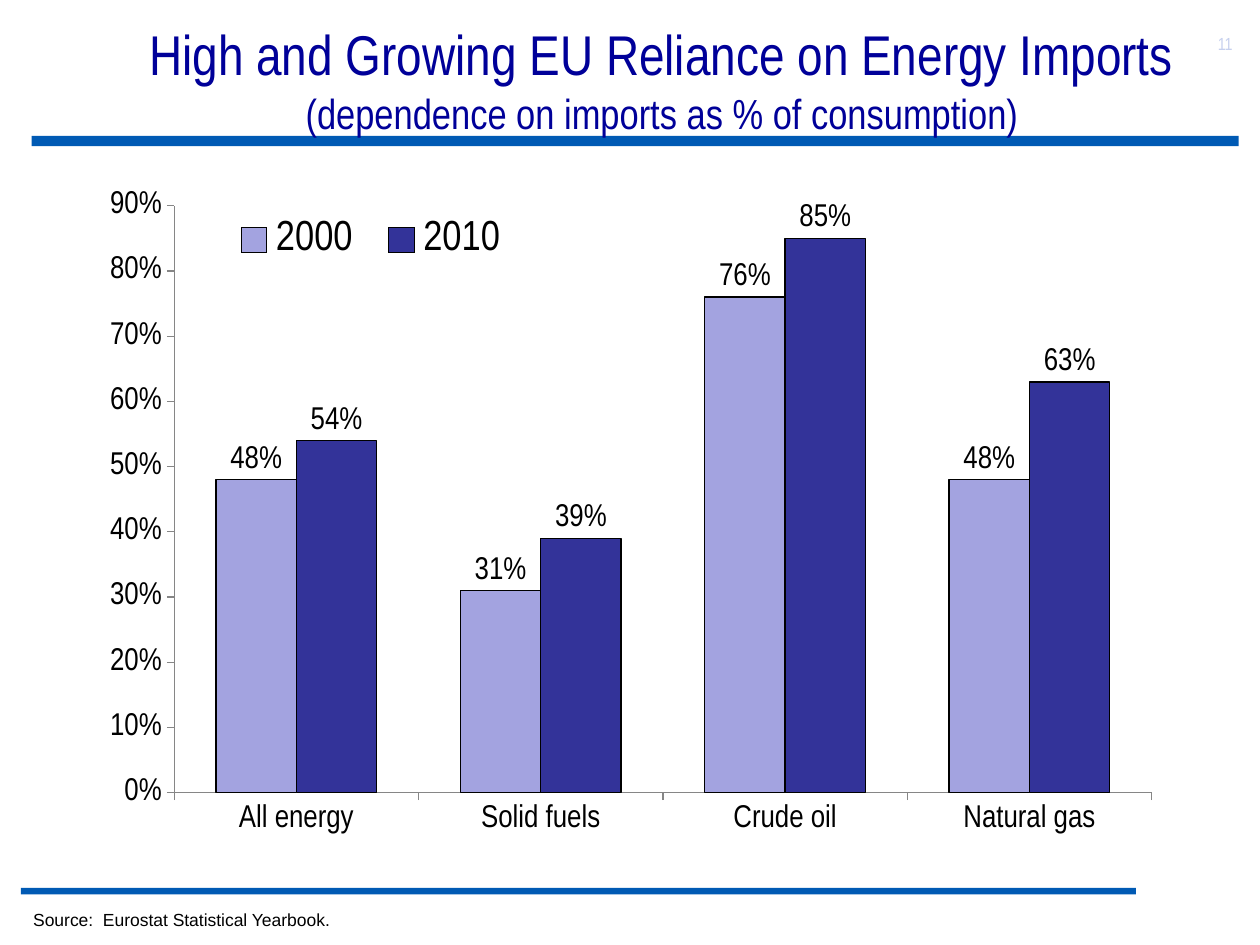
from lxml import etree
from pptx import Presentation
from pptx.chart.data import CategoryChartData
from pptx.dml.color import RGBColor
from pptx.enum.chart import XL_CHART_TYPE as ChartType, XL_LABEL_POSITION as LabelPos
from pptx.enum.chart import XL_LEGEND_POSITION as LegendPos, XL_TICK_MARK as Tick
from pptx.enum.shapes import MSO_SHAPE as Shape
from pptx.enum.text import MSO_ANCHOR as Anchor, PP_ALIGN as Align
from pptx.oxml.ns import qn
from pptx.util import Cm, Pt

BLUE = RGBColor(0x00, 0x5A, 0xB4)
NAVY = RGBColor(0x00, 0x00, 0x99)
PALE = RGBColor(0xC6, 0xD0, 0xEE)
LILAC = RGBColor(0xA3, 0xA3, 0xE0)
INDIGO = RGBColor(0x33, 0x33, 0x99)
GREY = RGBColor(0x86, 0x86, 0x86)
BLACK = RGBColor(0, 0, 0)
NARROW = "Arial Narrow"


class SlideBuilder:
    """Holds the slide and its style, and adds each kind of element."""

    def __init__(self, prs):
        self.s = prs.slides.add_slide(prs.slide_layouts[6])
        self.font = NARROW

    def bar(self, x, y, w, h):
        sp = self.s.shapes.add_shape(Shape.RECTANGLE, Cm(x), Cm(y), Cm(w), Cm(h))
        sp.shadow.inherit = False
        sp.fill.solid()
        sp.fill.fore_color.rgb = BLUE
        sp.line.fill.background()

    def text(self, x, y, w, h, lines, color, font=None, align=Align.LEFT, anchor=Anchor.TOP):
        tf = self.s.shapes.add_textbox(Cm(x), Cm(y), Cm(w), Cm(h)).text_frame
        tf.word_wrap = True
        tf.vertical_anchor = anchor
        p = tf.paragraphs[0]
        p.alignment = align
        for i, (words, size) in enumerate(lines):
            if i:
                p.add_line_break()
            r = p.add_run()
            r.text = words
            r.font.size = Pt(size)
            r.font.name = font or self.font
            r.font.color.rgb = color

    def layout(self, parent, before, box, inner=False):
        for old in parent.findall(qn("c:layout")):
            parent.remove(old)
        layout = etree.Element(qn("c:layout"))
        manual = etree.SubElement(layout, qn("c:manualLayout"))
        target = [("layoutTarget", "inner")] if inner else []
        modes = [("xMode", "edge"), ("yMode", "edge")]
        for tag, val in target + modes + list(zip("xywh", box)):
            etree.SubElement(manual, qn(f"c:{tag}")).set("val", str(val))
        parent.find(qn(before)).addprevious(layout)

    def axis(self, axis):
        axis.has_major_gridlines = False
        axis.major_tick_mark = Tick.OUTSIDE
        axis.minor_tick_mark = Tick.NONE
        axis.format.line.color.rgb = GREY
        axis.format.line.width = Pt(0.75)

    def columns(self, x, y, w, h, cats, series, plot_box, legend_box):
        data = CategoryChartData(number_format="0%")
        data.categories = cats
        for name, vals, _ in series:
            data.add_series(name, vals)
        chart = self.s.shapes.add_chart(
            ChartType.COLUMN_CLUSTERED, Cm(x), Cm(y), Cm(w), Cm(h), data).chart
        chart.has_title = False
        chart.font.size = Pt(18)
        chart.font.name = self.font
        chart.font.color.rgb = BLACK
        self.axis(chart.category_axis)
        self.axis(chart.value_axis)
        scale = chart.value_axis
        scale.minimum_scale, scale.maximum_scale, scale.major_unit = 0, 0.9, 0.1
        scale.tick_labels.number_format = "0%"
        scale.tick_labels.number_format_is_linked = False

        plot = chart.plots[0]
        plot.gap_width, plot.overlap = 104, 0
        plot.vary_by_categories = False
        for ser, (_, _, color) in zip(plot.series, series):
            ser.format.fill.solid()
            ser.format.fill.fore_color.rgb = color
            ser.format.line.color.rgb = BLACK
            ser.format.line.width = Pt(0.75)
            labels = ser.data_labels
            labels.show_value = True
            labels.number_format = "0%"
            labels.number_format_is_linked = False
            labels.position = LabelPos.OUTSIDE_END

        chart.has_legend = True
        legend = chart.legend
        legend.position = LegendPos.RIGHT
        legend.include_in_layout = False
        legend.font.size = Pt(24)
        legend.font.name = self.font
        legend.font.color.rgb = BLACK
        root = chart.element
        self.layout(root.find(".//" + qn("c:plotArea")), "c:barChart", plot_box, inner=True)
        self.layout(root.find(".//" + qn("c:legend")), "c:overlay", legend_box)


def main():
    prs = Presentation()
    prs.slide_width, prs.slide_height = Cm(25.4), Cm(19.05)
    b = SlideBuilder(prs)
    b.bar(0.64, 2.74, 24.33, 0.21)
    b.bar(0.42, 17.9, 22.48, 0.13)
    b.text(1.7, 0.42, 23.28, 2.33,
           [("High and Growing EU Reliance on Energy Imports", 32),
            ("(dependence on imports as % of consumption)", 24)],
           NAVY, align=Align.CENTER, anchor=Anchor.MIDDLE)
    b.columns(1.7, 3.6, 22.65, 13.76,
              ["All energy", "Solid fuels", "Crude oil", "Natural gas"],
              [("2000", (0.48, 0.31, 0.76, 0.48), LILAC),
               ("2010", (0.54, 0.39, 0.85, 0.63), INDIGO)],
              plot_box=(0.08, 0.04, 0.87, 0.86), legend_box=(0.12, 0.05, 0.27, 0.08))
    b.text(0.42, 18.2, 21.38, 0.68,
           [("Source:  Eurostat Statistical Yearbook.", 10)], BLACK, font="Arial")
    b.text(24.3, 0.54, 1.1, 1.27, [("11", 10)], PALE)
    prs.save("out.pptx")


if __name__ == "__main__":
    main()
